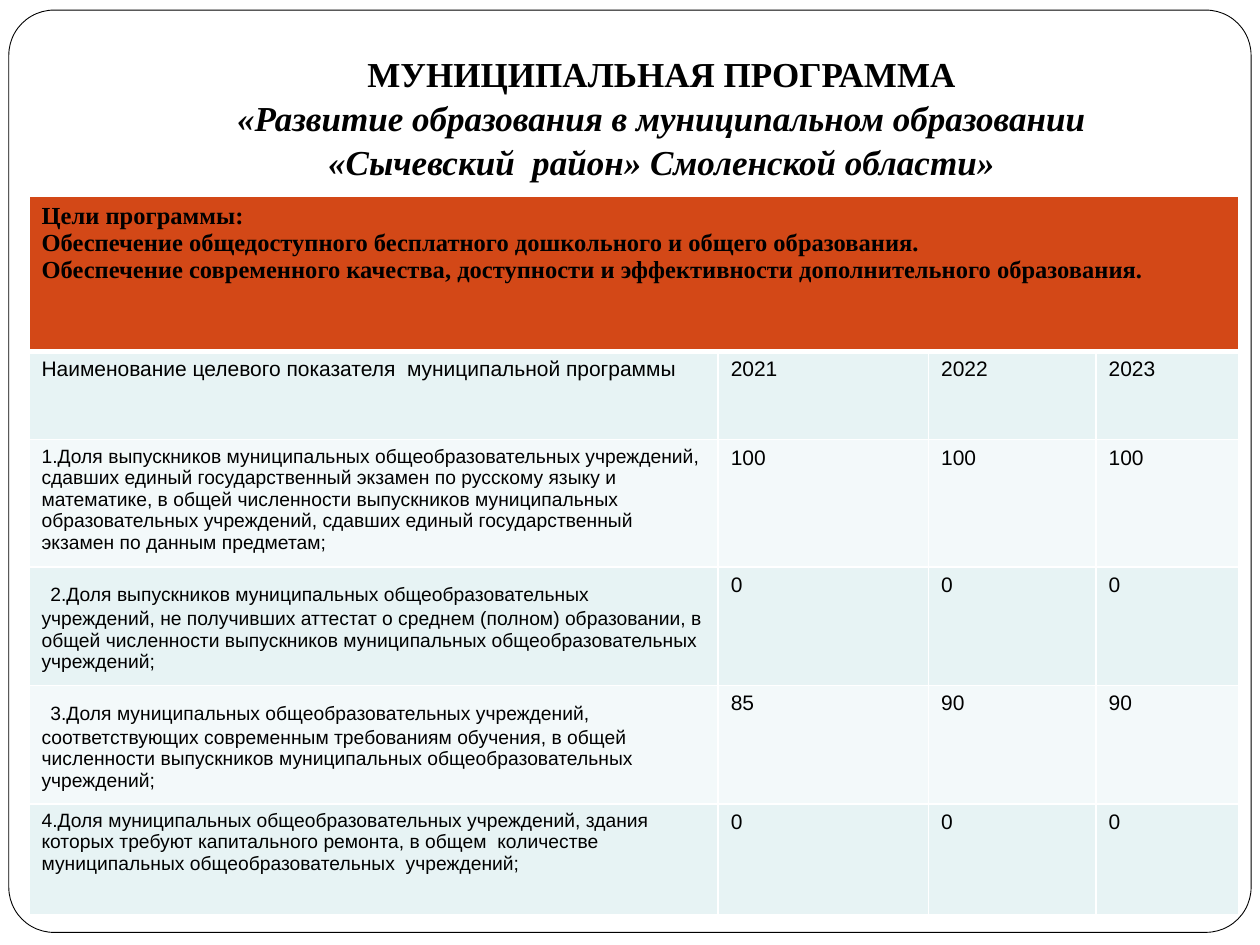
"""Build the slide on the goals and indicators of a municipal education programme."""
from dataclasses import dataclass

from lxml import etree
from pptx import Presentation
from pptx import util as u
from pptx.dml.color import RGBColor
from pptx.enum import shapes, text
from pptx.oxml.ns import qn


@dataclass(frozen=True)
class Theme:
    """Colours, fonts and type sizes of the slide."""
    paper: str = "FFFFFF"
    ink: str = "000000"
    accent: str = "D34817"
    bands: tuple[str, str] = ("E7F3F4", "F3F9FA")
    serif: str = "Times New Roman"
    sans: str = "Arial"
    title: float = 20
    goals: float = 14
    value: float = 12
    label: float = 11
    lead: float = 18
    rule: float = 1
    heavy_rule: float = 3


@dataclass(frozen=True)
class Indicator:
    """A target indicator with its value for each year."""
    name: str
    values: tuple[str, str, str]
    size: float
    lead: str = ""


THEME = Theme()
TITLE = (
    ("МУНИЦИПАЛЬНАЯ ПРОГРАММА", False),
    ("«Развитие образования в муниципальном образовании", True),
    ("«Сычевский  район» Смоленской области»", True),
)
GOALS = (
    "Цели программы:",
    "Обеспечение общедоступного бесплатного дошкольного и общего образования.",
    "Обеспечение современного качества, доступности и эффективности дополнительного образования.",
)
INDICATORS = (
    Indicator("Наименование целевого показателя  муниципальной программы",
              ("2021", "2022", "2023"), THEME.value),
    Indicator("1.Доля выпускников муниципальных общеобразовательных учреждений, сдавших единый "
              "государственный экзамен по русскому языку и математике, в общей численности "
              "выпускников муниципальных образовательных учреждений, сдавших единый "
              "государственный экзамен по данным предметам;",
              ("100", "100", "100"), THEME.label),
    Indicator("2.Доля выпускников муниципальных общеобразовательных учреждений, не получивших "
              "аттестат о среднем (полном) образовании, в общей численности выпускников "
              "муниципальных общеобразовательных  учреждений;",
              ("0", "0", "0"), THEME.label, " "),
    Indicator("3.Доля муниципальных общеобразовательных учреждений, соответствующих современным "
              "требованиям обучения, в общей численности выпускников муниципальных "
              "общеобразовательных  учреждений;",
              ("85", "90", "90"), THEME.label, " "),
    Indicator("4.Доля муниципальных общеобразовательных учреждений, здания которых требуют "
              "капитального ремонта, в общем  количестве муниципальных "
              "общеобразовательных  учреждений;",
              ("0", "0", "0"), THEME.label),
)
COLUMNS = (5.47, 1.67, 1.33, 1.13)
ROWS = (1.23, 0.7, 1.01, 0.94, 0.94, 0.88)


def add_run(p, words: str, size: float, font: str, bold: bool = False, italic: bool = False) -> None:
    """Append one formatted run to a paragraph."""
    r = p.add_run()
    r.text = words
    r.font.size, r.font.name = u.Pt(size), font
    r.font.bold, r.font.italic = bold, italic
    r.font.color.rgb = RGBColor.from_string(THEME.ink)


def add_frame(slide):
    """Draw the rounded outline around the slide."""
    sp = slide.shapes.add_shape(shapes.MSO_SHAPE.ROUNDED_RECTANGLE, u.Inches(0.07),
                                u.Inches(0.08), u.Inches(9.86), u.Inches(7.32))
    sp.adjustments[0] = 0.049
    sp.shadow.inherit = False
    sp.fill.solid()
    sp.fill.fore_color.rgb = RGBColor.from_string(THEME.paper)
    sp.line.color.rgb = RGBColor.from_string(THEME.ink)
    sp.line.width = u.Pt(0.5)
    return sp


def fill_title(sp) -> None:
    """Place the title and write its lines."""
    sp.left, sp.top = u.Inches(1), u.Inches(0.3)
    sp.width, sp.height = u.Inches(8.5), u.Inches(1.25)
    tf = sp.text_frame
    tf.auto_size = text.MSO_AUTO_SIZE.NONE
    tf.word_wrap = True
    tf.vertical_anchor = text.MSO_ANCHOR.BOTTOM
    tf.margin_left = tf.margin_right = tf.margin_bottom = u.Inches(0.1)
    tf.margin_top = u.Inches(0.05)
    p = tf.paragraphs[0]
    p.alignment = text.PP_ALIGN.CENTER
    p.line_spacing = 1.05
    for i, (line, italic) in enumerate(TITLE):
        if i:
            p.add_line_break()
        add_run(p, line, THEME.title, THEME.serif, bold=True, italic=italic)


def style_cell(cell, fill: str, top: float, bottom: float) -> None:
    """Give a cell its white borders and its fill."""
    tc_pr = cell._tc.get_or_add_tcPr()
    widths = {"lnL": THEME.rule, "lnR": THEME.rule, "lnT": top, "lnB": bottom}
    for side, width in widths.items():
        ln = etree.SubElement(tc_pr, qn(f"a:{side}"), w=str(u.Pt(width)))
        solid = etree.SubElement(ln, qn("a:solidFill"))
        etree.SubElement(solid, qn("a:srgbClr"), val=THEME.paper)
    cell.fill.solid()
    cell.fill.fore_color.rgb = RGBColor.from_string(fill)


def add_indicator(table, row: int, item: Indicator) -> None:
    """Write one indicator and its yearly values into a table row."""
    p = table.cell(row, 0).text_frame.paragraphs[0]
    if item.lead:
        add_run(p, item.lead, THEME.lead, THEME.sans)
    add_run(p, item.name, item.size, THEME.sans)
    for col, value in enumerate(item.values, 1):
        add_run(table.cell(row, col).text_frame.paragraphs[0], value, THEME.value, THEME.sans)


def add_programme_table(slide) -> None:
    """Add the table of goals and indicators."""
    table = slide.shapes.add_table(len(ROWS), len(COLUMNS), u.Inches(0.23), u.Inches(1.56),
                                   u.Inches(sum(COLUMNS)), u.Inches(sum(ROWS))).table
    for column, width in zip(table.columns, COLUMNS):
        column.width = u.Inches(width)
    for i, (row, height) in enumerate(zip(table.rows, ROWS)):
        row.height = u.Inches(height)
        fill = THEME.bands[(i - 1) % 2] if i else THEME.accent
        top = THEME.heavy_rule if i == 1 else THEME.rule
        bottom = THEME.heavy_rule if i == 0 else THEME.rule
        for cell in row.cells:
            style_cell(cell, fill, top, bottom)
    header = table.cell(0, 0)
    header.merge(table.cell(0, len(COLUMNS) - 1))
    tf = header.text_frame
    for i, goal in enumerate(GOALS):
        p = tf.add_paragraph() if i else tf.paragraphs[0]
        add_run(p, goal, THEME.goals, THEME.serif, bold=True)
    for i, item in enumerate(INDICATORS, 1):
        add_indicator(table, i, item)


def main() -> None:
    """Build and save the presentation."""
    prs = Presentation()
    prs.slide_width, prs.slide_height = u.Inches(10), u.Inches(7.5)
    slide = prs.slides.add_slide(prs.slide_layouts[5])
    title = slide.shapes.title
    frame = add_frame(slide)
    frame._element.addnext(title._element)
    fill_title(title)
    add_programme_table(slide)
    prs.save("out.pptx")


if __name__ == "__main__":
    main()
